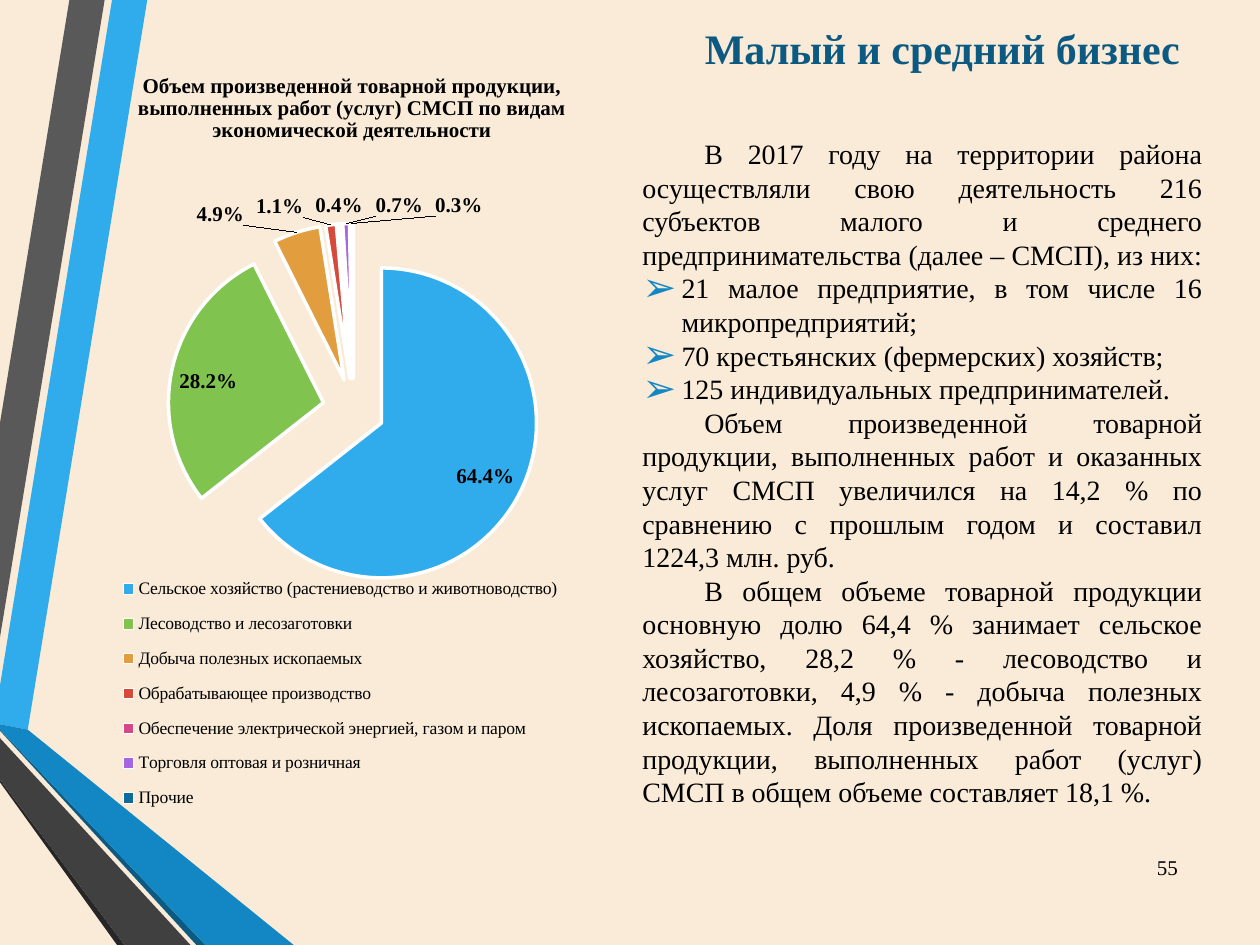
from lxml import etree
from pptx import Presentation
from pptx.chart.data import CategoryChartData
from pptx.dml.color import RGBColor
from pptx.enum.chart import XL_CHART_TYPE, XL_LABEL_POSITION, XL_LEGEND_POSITION
from pptx.enum.text import MSO_ANCHOR, PP_ALIGN
from pptx.oxml import parse_xml
from pptx.oxml.ns import nsdecls, qn
from pptx.util import Cm, Pt

PIE = XL_CHART_TYPE.PIE
BOTTOM = XL_LEGEND_POSITION.BOTTOM
INSIDE_END = XL_LABEL_POSITION.INSIDE_END
BEST_FIT = XL_LABEL_POSITION.BEST_FIT
MIDDLE = MSO_ANCHOR.MIDDLE
CENTER, JUSTIFY = PP_ALIGN.CENTER, PP_ALIGN.JUSTIFY

FONT = "Times New Roman"
CREAM = RGBColor(0xF9, 0xEB, 0xD8)
BLACK = RGBColor(0, 0, 0)
WHITE = RGBColor(0xFF, 0xFF, 0xFF)
SKY = RGBColor(0x30, 0xAC, 0xEC)
BLUE = RGBColor(0x12, 0x87, 0xC3)
NAVY = RGBColor(0x0C, 0x5A, 0x82)
GREY = RGBColor(0x59, 0x59, 0x59)
DARK = RGBColor(0x40, 0x40, 0x40)
COAL = RGBColor(0x26, 0x26, 0x26)
GREEN = RGBColor(0x80, 0xC3, 0x4F)
ORANGE = RGBColor(0xE2, 0x9D, 0x3E)
RED = RGBColor(0xD6, 0x4A, 0x3B)
PINK = RGBColor(0xD6, 0x47, 0x87)
VIOLET = RGBColor(0xA6, 0x66, 0xE1)
TEAL = RGBColor(0x0E, 0x6C, 0x9C)

RIBBONS = [
    (SKY, [(0, 13.82), (0, 14.6), (0.56, 14.71), (2.97, 0), (2.26, 0)]),
    (GREY, [(2.11, 0), (1.4, 0), (0, 8.53), (0, 12.85)]),
    (COAL, [(0, 15.72), (0, 15.77), (2.36, 19.05), (2.51, 19.05)]),
    (NAVY, [(0, 14.71), (0, 14.73), (3.96, 19.05), (4.14, 19.05)]),
    (BLUE, [(0, 14.71), (4.14, 19.05), (5.92, 19.05), (0.56, 14.71), (0, 14.6)]),
    (DARK, [(0, 15.72), (2.51, 19.05), (3.84, 19.05), (0, 14.88)]),
]
BODY = [
    (False, "В 2017 году на территории района осуществляли свою деятельность 216 субъектов "
            "малого и среднего предпринимательства (далее – СМСП), из них: "),
    (True, "21 малое предприятие, в том числе 16 микропредприятий;"),
    (True, "70 крестьянских (фермерских) хозяйств;"),
    (True, "125 индивидуальных предпринимателей. "),
    (False, "Объем произведенной товарной продукции, выполненных работ и оказанных услуг СМСП "
            "увеличился на 14,2 % по сравнению с прошлым годом и составил 1224,3 млн. руб. "),
    (False, "В общем объеме товарной продукции основную долю 64,4 % занимает сельское хозяйство, "
            "28,2 % - лесоводство и лесозаготовки, 4,9 % - добыча полезных ископаемых. Доля "
            "произведенной товарной продукции, выполненных работ (услуг) СМСП в общем объеме "
            "составляет 18,1 %."),
]
CHART_TITLE = ("Объем произведенной товарной продукции, выполненных работ (услуг) СМСП "
               "по видам экономической деятельности")
SECTORS = [
    ("Сельское хозяйство (растениеводство и животноводство)", 0.644, SKY),
    ("Лесоводство и лесозаготовки", 0.282, GREEN),
    ("Добыча полезных ископаемых", 0.049, ORANGE),
    ("Обрабатывающее производство", 0.011, RED),
    ("Обеспечение электрической энергией, газом и паром", 0.004, PINK),
    ("Торговля оптовая и розничная", 0.007, VIOLET),
    ("Прочие", 0.003, TEAL),
]
LABEL_SHIFTS = {2: (-0.085, 0), 3: (-0.045, 0), 4: (0, 0),
                5: (0.09, 0), 6: (0.18, 0)}


def set_font(font, size, color=BLACK, bold=False):
    """Format a font."""
    font.name, font.size, font.bold = FONT, Pt(size), bold
    font.color.rgb = color


def add_text(p, text, size, color=BLACK, bold=False, align=CENTER):
    """Write one formatted run into a paragraph."""
    p.alignment = align
    r = p.add_run()
    r.text = text
    set_font(r.font, size, color, bold)


def add_box(slide, x, y, w, h):
    """Add a wrapping, vertically centred text box and return its frame."""
    tf = slide.shapes.add_textbox(Cm(x), Cm(y), Cm(w), Cm(h)).text_frame
    tf.word_wrap, tf.vertical_anchor = True, MIDDLE
    return tf


def add_ribbon(slide, color, points):
    """Draw a filled polygon from points in centimetres."""
    corners = [(Cm(x), Cm(y)) for x, y in points]
    builder = slide.shapes.build_freeform(*corners[0])
    builder.add_line_segments(corners[1:], close=True)
    sp = builder.convert_to_shape()
    sp.shadow.inherit = False
    sp.fill.solid()
    sp.fill.fore_color.rgb = color
    sp.line.fill.background()


def set_indent(p, bulleted):
    """Apply a first-line indent or an arrow bullet."""
    pPr = p._p.get_or_add_pPr()
    pPr.set("marL", str(Cm(0.79) if bulleted else 0))
    pPr.set("indent", str(Cm(-0.79) if bulleted else Cm(1.25)))
    if bulleted:
        color = etree.SubElement(pPr, qn("a:buClr"))
        etree.SubElement(color, qn("a:srgbClr"), val=str(BLUE))
        etree.SubElement(pPr, qn("a:buSzPct"), val="145000")
        etree.SubElement(pPr, qn("a:buFont"), typeface="Arial")
        etree.SubElement(pPr, qn("a:buChar"), char="➢")


def add_body(slide):
    """Add the justified text column."""
    tf = add_box(slide, 12.7, 1.93, 11.79, 15.19)
    for i, (bulleted, text) in enumerate(BODY):
        p = tf.add_paragraph() if i else tf.paragraphs[0]
        set_indent(p, bulleted)
        p.line_spacing = Pt(19.2)
        add_text(p, text, 16, align=JUSTIFY)


def make_layout(**values):
    """Build a manual chart layout element."""
    layout = parse_xml(f"<c:layout {nsdecls('c')}><c:manualLayout/></c:layout>")
    for name, value in values.items():
        etree.SubElement(layout[0], qn(f"c:{name}"), val=str(value))
    return layout


def place(element, layout):
    """Replace the layout of a chart part."""
    for old in element.findall(qn("c:layout")):
        element.remove(old)
    before = element.find(qn("c:legendPos"))
    element.insert(0 if before is None else element.index(before) + 1, layout)


def add_labels(plot, series):
    """Label the slices, moving the narrow ones apart with leader lines."""
    plot.has_data_labels = True
    for labels in (plot.data_labels, series.data_labels):
        labels.show_value, labels.show_percentage = True, False
        labels.number_format, labels.number_format_is_linked = "0.0%", False
        labels.position = INSIDE_END
        set_font(labels.font, 12, bold=True)
    dLbls = series.data_labels._element
    for i, (x, y) in LABEL_SHIFTS.items():
        label = series.points[i].data_label
        label.position = BEST_FIT
        set_font(label.font, 12, bold=True)
        dLbls.findall(qn("c:dLbl"))[-1].insert(1, make_layout(x=x, y=y))
    for old in dLbls.findall(qn("c:showLeaderLines")):
        dLbls.remove(old)
    etree.SubElement(dLbls, qn("c:showLeaderLines"), val="1")


def add_pie(slide):
    """Add the exploded pie of sectors."""
    data = CategoryChartData(number_format="0.0%")
    data.categories = [name for name, _, _ in SECTORS]
    data.add_series("Series 1", [value for _, value, _ in SECTORS])
    chart = slide.shapes.add_chart(PIE, Cm(1.1), Cm(0.93), Cm(11.99), Cm(15.82), data).chart
    set_font(chart.font, 10)
    chart.has_title = True
    add_text(chart.chart_title.text_frame.paragraphs[0], CHART_TITLE, 12, bold=True)
    chart.has_legend = True
    chart.legend.position, chart.legend.include_in_layout = BOTTOM, False
    set_font(chart.legend.font, 10)
    place(chart.legend._element, make_layout(
        xMode="edge", yMode="edge", x=0.09, y=0.66, w=0.78, h=0.33))
    plot = chart.plots[0]
    plot.vary_by_categories = True
    place(chart._chartSpace.chart.plotArea, make_layout(
        layoutTarget="inner", xMode="edge", yMode="edge", x=0.107, y=0.226, w=0.792, h=0.474))
    series = plot.series[0]
    for i, (_, _, color) in enumerate(SECTORS):
        point = series.points[i].format
        point.fill.solid()
        point.fill.fore_color.rgb = color
        point.line.color.rgb, point.line.width = WHITE, Pt(2)
    explosion = parse_xml(f'<c:explosion {nsdecls("c")} val="20"/>')
    series._element.find(qn("c:dPt")).addprevious(explosion)
    add_labels(plot, series)


def main():
    """Build the slide."""
    prs = Presentation()
    prs.slide_width, prs.slide_height = Cm(25.4), Cm(19.05)
    slide = prs.slides.add_slide(prs.slide_layouts[5])
    slide.background.fill.solid()
    slide.background.fill.fore_color.rgb = CREAM
    for color, points in RIBBONS:
        add_ribbon(slide, color, points)
    title = slide.shapes.title
    title.left, title.top, title.width, title.height = Cm(12.7), Cm(0), Cm(12.6), Cm(1.93)
    title.text_frame.vertical_anchor = MIDDLE
    add_text(title.text_frame.paragraphs[0], "Малый и средний бизнес", 24, NAVY, True)
    add_body(slide)
    add_text(add_box(slide, 22.94, 16.97, 1.19, 1.02).paragraphs[0], "55", 12)
    add_pie(slide)
    prs.save("out.pptx")


if __name__ == "__main__":
    main()
